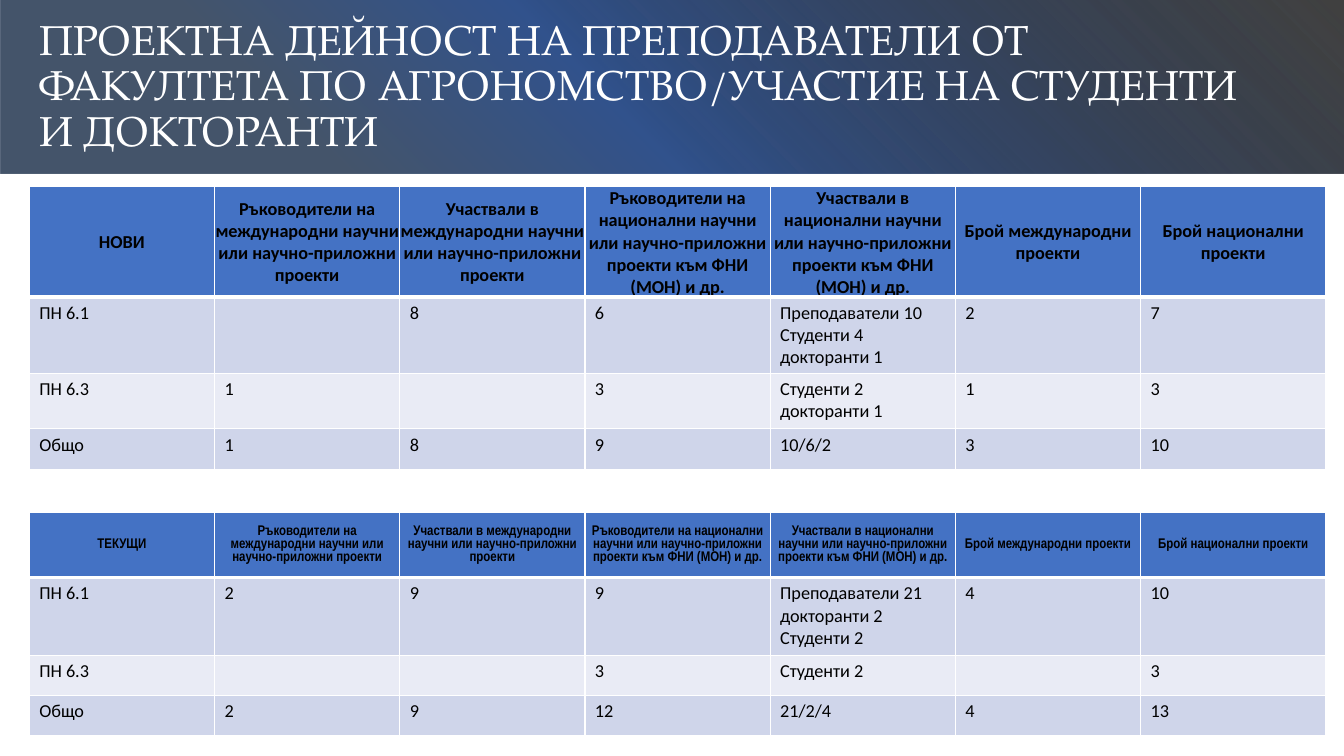
import pptx
import pptx.util
import pptx.dml.color
import pptx.enum.shapes
import pptx.enum.text
import pptx.oxml
import pptx.oxml.ns
from pptx.util import Inches, Pt

BLACK, WHITE, BLUE = "000000", "FFFFFF", "4472C4"
BANDS = ["CFD5EA", "E9EBF5"]
MIDDLE = pptx.enum.text.MSO_ANCHOR.MIDDLE
DRAWING_NS = pptx.oxml.ns.nsdecls("a")

PROJECT_COLUMNS = [
    "Ръководители на международни научни или научно-приложни проекти",
    "Участвали в международни научни или научно-приложни проекти",
    "Ръководители на национални научни или научно-приложни проекти към ФНИ (МОН) и др.",
    "Участвали в национални научни или научно-приложни проекти към ФНИ (МОН) и др.",
    "Брой международни проекти",
    "Брой национални проекти",
]
NEW_PROJECTS = [
    ["ПН 6.1", "", "8", "6", "Преподаватели 10\nСтуденти 4\nдокторанти 1", "2", "7"],
    ["ПН 6.3", "1", "", "3", "Студенти 2 докторанти 1", "1", "3"],
    ["Общо", "1", "8", "9", "10/6/2", "3", "10"],
]
CURRENT_PROJECTS = [
    ["ПН 6.1", "2", "9", "9", "Преподаватели 21 докторанти 2\nСтуденти 2", "4", "10"],
    ["ПН 6.3", "", "", "3", "Студенти 2", "", "3"],
    ["Общо", "2", "9", "12", "21/2/4", "4", "13"],
]


def rgb(hex_color):
    return pptx.dml.color.RGBColor.from_string(hex_color)


def set_font(paragraph, name, size, color, bold=False):
    font = paragraph.font
    font.name, font.size, font.bold = name, Pt(size), bold
    font.color.rgb = rgb(color)


def add_title_band(slide, width, height):
    """Gradient band along the top edge: a tall rectangle turned on its side."""
    band = slide.shapes.add_shape(
        pptx.enum.shapes.MSO_SHAPE.RECTANGLE,
        Inches((width - height) / 2), Inches((height - width) / 2),
        Inches(height), Inches(width))
    band.rotation = 90
    band.shadow.inherit = False
    band.line.fill.background()
    gradient = pptx.oxml.parse_xml(
        f'<a:gradFill {DRAWING_NS} rotWithShape="1"><a:gsLst>'
        '<a:gs pos="23000"><a:srgbClr val="44546A"/></a:gs>'
        '<a:gs pos="45000"><a:srgbClr val="31528C"/></a:gs>'
        '<a:gs pos="99000"><a:srgbClr val="000000"><a:alpha val="74000"/></a:srgbClr></a:gs>'
        '</a:gsLst><a:lin ang="13500000" scaled="0"/></a:gradFill>')
    properties = band.element.spPr
    properties.find(pptx.oxml.ns.qn("a:prstGeom")).addnext(gradient)


def add_title(slide, left, top, width, height):
    title = slide.shapes.add_textbox(
        Inches(left), Inches(top), Inches(width), Inches(height))
    frame = title.text_frame
    frame.word_wrap = True
    frame.vertical_anchor = MIDDLE
    frame.text = ("ПРОЕКТНА ДЕЙНОСТ НА ПРЕПОДАВАТЕЛИ ОТ ФАКУЛТЕТА ПО "
                  "АГРОНОМСТВО/УЧАСТИЕ НА СТУДЕНТИ И ДОКТОРАНТИ")
    frame.paragraphs[0].line_spacing = 0.9
    set_font(frame.paragraphs[0], "TeX Gyre Pagella", 30, WHITE)


def set_borders(cell, top, bottom):
    """White cell borders; the widths of top and bottom are in points."""
    properties = cell._tc.get_or_add_tcPr()
    for side, points in zip("LRTB", (1, 1, top, bottom)):
        properties.append(pptx.oxml.parse_xml(
            f'<a:ln{side} {DRAWING_NS} w="{Pt(points)}"><a:solidFill>'
            f'<a:srgbClr val="{WHITE}"/></a:solidFill></a:ln{side}>'))


def format_header(cell, font_name, font_size):
    set_borders(cell, top=1, bottom=3)
    cell.fill.solid()
    cell.fill.fore_color.rgb = rgb(BLUE)
    cell.vertical_anchor = MIDDLE
    cell.margin_left = cell.margin_right = cell.margin_top = Inches(0.01)
    cell.margin_bottom = 0
    for paragraph in cell.text_frame.paragraphs:
        paragraph.alignment = pptx.enum.text.PP_ALIGN.CENTER
        set_font(paragraph, font_name, font_size, BLACK, bold=True)


def format_body(cell, row):
    set_borders(cell, top=3 if row == 1 else 1, bottom=1)
    cell.fill.solid()
    cell.fill.fore_color.rgb = rgb(BANDS[(row - 1) % 2])
    for paragraph in cell.text_frame.paragraphs:
        set_font(paragraph, "Calibri", 13, BLACK)


def add_projects_table(slide, left, top, width, row_heights, heading, projects,
                       header_font, header_size):
    rows = [[heading] + PROJECT_COLUMNS] + projects
    columns = len(rows[0])
    table = slide.shapes.add_table(
        len(rows), columns, Inches(left), Inches(top),
        Inches(width), Inches(sum(row_heights))).table
    for column in table.columns:
        column.width = Inches(width / columns)
    for row, (height, texts) in enumerate(zip(row_heights, rows)):
        table.rows[row].height = Inches(height)
        for column, text in enumerate(texts):
            cell = table.cell(row, column)
            cell.text = text
            if row == 0:
                format_header(cell, header_font, header_size)
            else:
                format_body(cell, row)


def main():
    presentation = pptx.Presentation()
    presentation.slide_width = Inches(13.33)
    presentation.slide_height = Inches(7.5)
    slide = presentation.slides.add_slide(presentation.slide_layouts[6])
    add_title_band(slide, 13.33, 1.72)
    add_title(slide, 0.29, 0.14, 12.13, 1.45)
    add_projects_table(slide, 0.29, 1.85, 12.86, [1.09, 0.76, 0.55, 0.4],
                       "НОВИ", NEW_PROJECTS, "Calibri", 13)
    add_projects_table(slide, 0.29, 5.08, 12.86, [0.65, 0.77, 0.4, 0.4],
                       "ТЕКУЩИ", CURRENT_PROJECTS, "Arial Narrow", 10)
    presentation.save("out.pptx")


if __name__ == "__main__":
    main()
